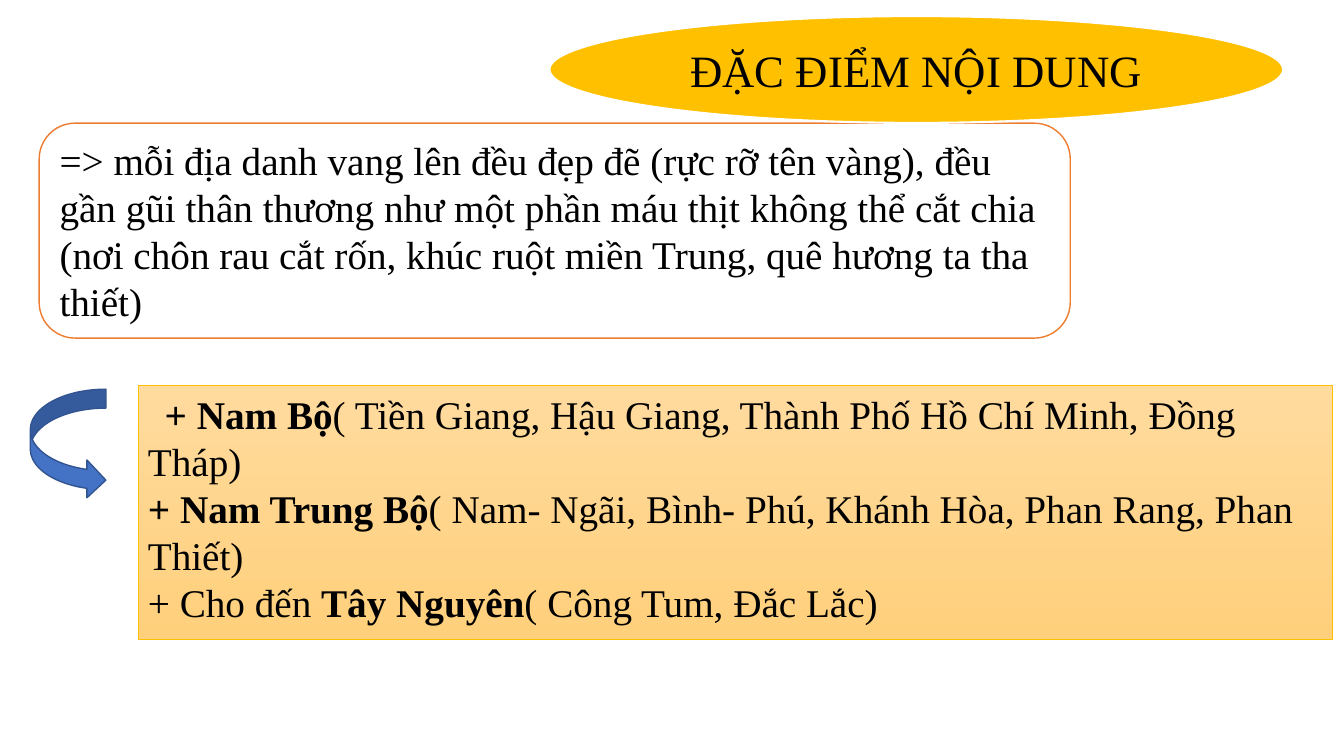
from pptx import Presentation
from pptx.dml.color import RGBColor
from pptx.enum.shapes import MSO_SHAPE as Shape
from pptx.enum.text import MSO_ANCHOR as Anchor, PP_ALIGN as Align
from pptx.util import Pt


def color(hex_string):
    return RGBColor.from_string(hex_string)


class SlideBuilder:
    font = "Times New Roman"
    ink = "000000"

    def __init__(self, slide):
        self.slide = slide

    def panel(self, kind, box, fill, line, line_width):
        """Add a preset shape; a pair of colours gives a vertical gradient."""
        panel = self.slide.shapes.add_shape(kind, *map(Pt, box))
        panel.shadow.inherit = False
        if isinstance(fill, tuple):
            panel.fill.gradient()
            panel.fill.gradient_angle = 270
            for stop, shade in zip(panel.fill.gradient_stops, fill):
                stop.color.rgb = color(shade)
        else:
            panel.fill.solid()
            panel.fill.fore_color.rgb = color(fill)
        panel.line.color.rgb = color(line)
        panel.line.width = Pt(line_width)
        return panel

    def add_text(self, panel, paragraphs, size, align=Align.LEFT, anchor=Anchor.MIDDLE):
        """Fill a panel with paragraphs, each a list of (text, bold) runs."""
        frame = panel.text_frame
        frame.word_wrap = True
        frame.vertical_anchor = anchor
        for number, runs in enumerate(paragraphs):
            paragraph = frame.add_paragraph() if number else frame.paragraphs[0]
            paragraph.alignment = align
            for text, bold in runs:
                run = paragraph.add_run()
                run.text = text
                run.font.name = self.font
                run.font.size = Pt(size)
                run.font.bold = bold
                run.font.color.rgb = color(self.ink)
        return frame


def main():
    deck = Presentation()
    deck.slide_width, deck.slide_height = Pt(960), Pt(540)
    builder = SlideBuilder(deck.slides.add_slide(deck.slide_layouts[6]))

    remark = builder.panel(Shape.ROUNDED_RECTANGLE, (28, 88, 736.5, 153.5),
                           "FFFFFF", "ED7D31", 1)
    builder.add_text(remark, [[(
        "=> mỗi địa danh vang lên đều đẹp đẽ (rực rỡ tên vàng), đều gần gũi "
        "thân thương như một phần máu thịt không thể cắt chia (nơi chôn rau "
        "cắt rốn, khúc ruột miền Trung, quê hương ta tha thiết)", False)]], 28)

    regions = builder.panel(Shape.RECTANGLE, (98.6, 275, 853.2, 181.5),
                            ("FFDB9E", "FFD07C"), "FFC000", 0.5)
    region_text = builder.add_text(regions, [
        [("+ Nam Bộ", True),
         ("( Tiền Giang, Hậu Giang, Thành Phố Hồ Chí Minh, Đồng Tháp)", False)],
        [("+ Nam Trung Bộ", True),
         ("( Nam- Ngãi, Bình- Phú, Khánh Hòa, Phan Rang, Phan Thiết)", False)],
        [("+ Cho đến ", False), ("Tây Nguyên", True),
         ("( Công Tum, Đắc Lắc)", False)],
    ], 28, anchor=Anchor.TOP)
    southern = region_text.paragraphs[0]
    southern.space_before = Pt(4)
    southern._p.get_or_add_pPr().set("indent", str(Pt(12)))

    builder.panel(Shape.CURVED_RIGHT_ARROW, (21.6, 278, 54, 78.5),
                  "4472C4", "325491", 1)

    heading = builder.panel(Shape.OVAL, (392.4, 11.5, 524.2, 76.3),
                            "FFC000", "FFFFFF", 1.5)
    builder.add_text(heading, [[("ĐẶC ĐIỂM NỘI DUNG", False)]], 32, Align.CENTER)

    deck.save("out.pptx")


if __name__ == "__main__":
    main()
